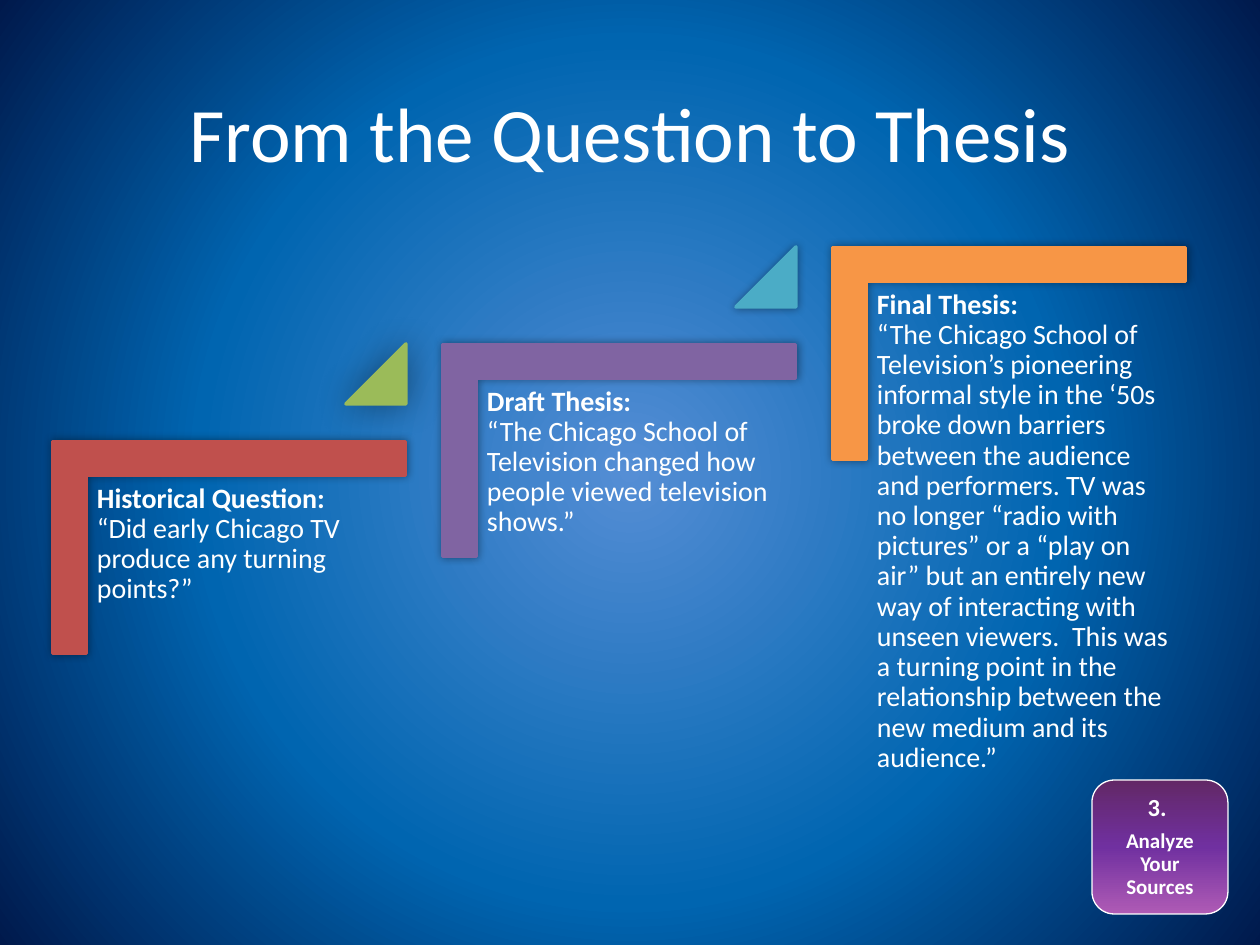
from pptx import Presentation
from pptx.dml.color import RGBColor
from pptx.enum.shapes import MSO_SHAPE
from pptx.enum.text import MSO_ANCHOR, PP_ALIGN
from pptx.oxml import parse_xml
from pptx.oxml.ns import nsdecls, qn
from pptx.util import Emu, Pt

PX = 914400 // 126
WHITE = RGBColor(0xFF, 0xFF, 0xFF)
RED = RGBColor(0xC0, 0x50, 0x4D)
GREEN = RGBColor(0x9B, 0xBB, 0x59)
PURPLE = RGBColor(0x80, 0x64, 0xA2)
TEAL = RGBColor(0x4B, 0xAC, 0xC6)
ORANGE = RGBColor(0xF7, 0x96, 0x46)
BACKDROP = [(0, RGBColor(0x55, 0x8E, 0xD5)), (55, RGBColor(0x00, 0x65, 0xB0)),
            (100, RGBColor(0x00, 0x19, 0x4C))]
BADGE = [(0, RGBColor(0x62, 0x28, 0x66)), (50, RGBColor(0x70, 0x30, 0xA0)),
         (100, RGBColor(0xAF, 0x5B, 0xB5))]
RADIAL = ('<a:path path="circle"><a:fillToRect l="50000" t="50000" '
          'r="50000" b="50000"/></a:path>')
DOWNWARD = '<a:lin ang="5400000" scaled="0"/>'

# heading, statement, bar colour, colour of the triangle leading to the next step
STEPS = [
    ("Historical Question: ", "“Did early Chicago TV produce any turning points?”",
     RED, GREEN),
    ("Draft Thesis: ",
     "“The Chicago School of Television changed how people viewed television shows.”",
     PURPLE, TEAL),
    ("Final Thesis: ",
     "“The Chicago School of Television’s pioneering informal style in the ‘50s "
     "broke down barriers between the audience and performers. TV was no longer "
     "“radio with pictures” or a “play on air” but an entirely new way of "
     "interacting with unseen viewers.  This was a turning point in the "
     "relationship between the new medium and its audience.”",
     ORANGE, None),
]
STEP_LEFT, STEP_TOP, STEP_WIDTH, STEP_HEIGHT = 53, 441, 353, 212
STEP_RIGHTWARD, STEP_UPWARD = 390, 97
TRIANGLE = 60


def px(*lengths):
    return [Emu(length * PX) for length in lengths]


class Deck:
    font = "Calibri"

    def __init__(self, width, height):
        self.presentation = Presentation()
        self.presentation.slide_width, self.presentation.slide_height = px(width, height)
        self.slide = self.presentation.slides.add_slide(
            self.presentation.slide_layouts[5])

    def gradient(self, fill, owner, stops, direction):
        """Give owner, the element holding fill, a gradient of any number of stops."""
        fill.background()
        empty = next(owner.iter(qn("a:noFill")))
        marks = "".join(f'<a:gs pos="{at * 1000}"><a:srgbClr val="{color}"/></a:gs>'
                        for at, color in stops)
        empty.getparent().replace(empty, parse_xml(
            f'<a:gradFill {nsdecls("a")} rotWithShape="1"><a:gsLst>{marks}</a:gsLst>'
            f'{direction}</a:gradFill>'))

    def backdrop(self, stops):
        self.gradient(self.slide.background.fill, self.slide.element, stops, RADIAL)

    def run(self, paragraph, text, size, bold=False):
        run = paragraph.add_run()
        run.text = text
        run.font.name, run.font.size, run.font.bold = self.font, Pt(size), bold
        run.font.color.rgb = WHITE

    def frame(self, shape, inset, anchor):
        frame = shape.text_frame
        frame.word_wrap = True
        frame.vertical_anchor = anchor
        frame.margin_left, frame.margin_top, frame.margin_right, frame.margin_bottom = (
            px(inset) * 4)
        return frame

    def title(self, text, *box):
        title = self.slide.shapes.title
        title.left, title.top, title.width, title.height = px(*box)
        title.text_frame.vertical_anchor = MSO_ANCHOR.MIDDLE
        paragraph = title.text_frame.paragraphs[0]
        paragraph.alignment = PP_ALIGN.CENTER
        self.run(paragraph, text, 44)

    def block(self, preset, color, adjustments, blur, *box, rotation=0):
        """Add a one-colour shape with rounded line joins and a soft shadow."""
        shape = self.slide.shapes.add_shape(preset, *px(*box))
        shape.rotation = rotation
        for index, value in enumerate(adjustments):
            shape.adjustments[index] = value
        shape.fill.solid()
        shape.fill.fore_color.rgb = color
        shape.line.color.rgb = color
        shape.line.width = Pt(2)
        properties = shape.element.spPr
        properties.find(qn("a:ln")).append(parse_xml(f'<a:round {nsdecls("a")}/>'))
        shape.shadow.inherit = False
        properties.find(qn("a:effectLst")).append(parse_xml(
            f'<a:outerShdw {nsdecls("a")} blurRad="{Pt(blur)}" dist="0" dir="0" '
            'rotWithShape="0"><a:srgbClr val="000000"><a:alpha val="40000"/>'
            '</a:srgbClr></a:outerShdw>'))

    def statement(self, heading, text, *box):
        shape = self.slide.shapes.add_textbox(*px(*box))
        paragraph = self.frame(shape, 9, MSO_ANCHOR.TOP).paragraphs[0]
        paragraph.line_spacing = 0.9
        self.run(paragraph, heading, 16, bold=True)
        paragraph.add_line_break()
        self.run(paragraph, text, 16)

    def badge(self, lines, stops, *box):
        shape = self.slide.shapes.add_shape(MSO_SHAPE.ROUNDED_RECTANGLE, *px(*box))
        shape.shadow.inherit = False
        self.gradient(shape.fill, shape.element.spPr, stops, DOWNWARD)
        shape.line.color.rgb = WHITE
        shape.line.width = Pt(0.75)
        frame = self.frame(shape, 21, MSO_ANCHOR.MIDDLE)
        for index, (text, size) in enumerate(lines):
            paragraph = frame.add_paragraph() if index else frame.paragraphs[0]
            paragraph.alignment = PP_ALIGN.CENTER
            paragraph.line_spacing = 0.9
            paragraph.space_after = Pt(round(size * 0.35))
            self.run(paragraph, text, size, bold=True)


def main():
    deck = Deck(1260, 945)
    deck.backdrop(BACKDROP)
    deck.title("From the Question to Thesis", 63, 53, 1134, 158)

    # A bar is a corner turned a quarter, so its box is upright around the same centre.
    turn = (STEP_WIDTH - STEP_HEIGHT) // 2
    for index, (heading, text, bar, triangle) in enumerate(STEPS):
        left = STEP_LEFT + index * STEP_RIGHTWARD
        top = STEP_TOP - index * STEP_UPWARD
        deck.block(MSO_SHAPE.CORNER, bar, [0.16, 0.16], 5,
                   left + turn, top - turn, STEP_HEIGHT, STEP_WIDTH, rotation=90)
        deck.statement(heading, text, left + 35, top + 34, 319, 280)
        if triangle:
            deck.block(MSO_SHAPE.ISOSCELES_TRIANGLE, triangle, [1], 5 if index else 20,
                       left + STEP_WIDTH - TRIANGLE, top - STEP_UPWARD,
                       TRIANGLE, TRIANGLE)

    deck.badge([("3. ", 14), ("Analyze Your Sources", 12)], BADGE, 1092, 780, 136, 134)
    deck.presentation.save("out.pptx")


if __name__ == "__main__":
    main()
